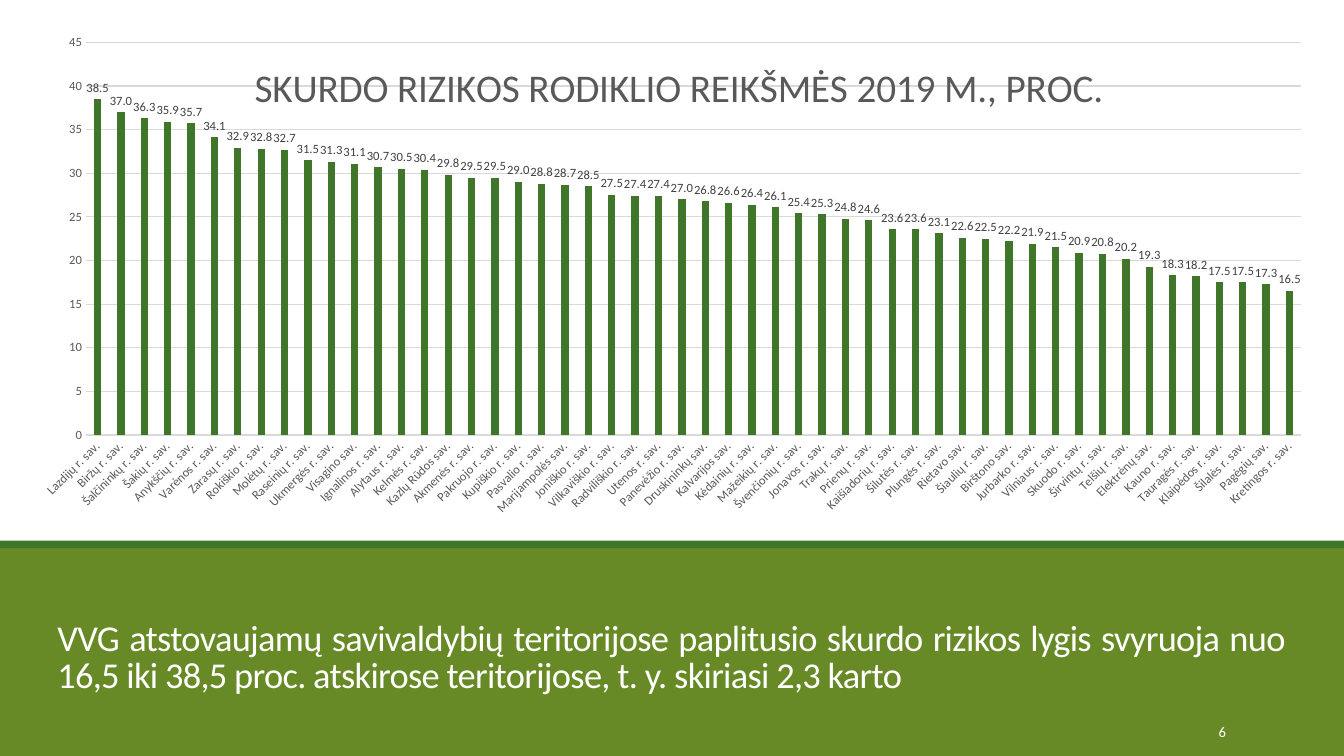
from lxml.etree import SubElement
from pptx import Presentation
from pptx.chart.data import CategoryChartData
from pptx.dml.color import RGBColor
from pptx.enum.chart import XL_CHART_TYPE, XL_LABEL_POSITION, XL_TICK_MARK
from pptx.enum.shapes import MSO_SHAPE
from pptx.enum.text import MSO_ANCHOR, MSO_AUTO_SIZE, PP_ALIGN
from pptx.oxml import parse_xml
from pptx.oxml.ns import nsdecls, qn
from pptx.util import Pt

EMU_PER_PX = 9525
FONT = "Calibri"
COLORS = {
    "band": "678A26",
    "accent": "3F762A",
    "white": "FFFFFF",
    "black": "000000",
    "axis": "595959",
    "grid": "D9D9D9",
    "label": "404040",
}

POVERTY_RISK = [
    ("Lazdijų r.", 38.5), ("Biržų r.", 37.0), ("Šalčininkų r.", 36.3), ("Šakių r.", 35.9),
    ("Anykščių r.", 35.7), ("Varėnos r.", 34.1), ("Zarasų r.", 32.9), ("Rokiškio r.", 32.8),
    ("Molėtų r.", 32.7), ("Raseinių r.", 31.5), ("Ukmergės r.", 31.3), ("Visagino", 31.1),
    ("Ignalinos r.", 30.7), ("Alytaus r.", 30.5), ("Kelmės r.", 30.4), ("Kazlų Rūdos", 29.8),
    ("Akmenės r.", 29.5), ("Pakruojo r.", 29.5), ("Kupiškio r.", 29.0), ("Pasvalio r.", 28.8),
    ("Marijampolės", 28.7), ("Joniškio r.", 28.5), ("Vilkaviškio r.", 27.5), ("Radviliškio r.", 27.4),
    ("Utenos r.", 27.4), ("Panevėžio r.", 27.0), ("Druskininkų", 26.8), ("Kalvarijos", 26.6),
    ("Kėdainių r.", 26.4), ("Mažeikių r.", 26.1), ("Švenčionių r.", 25.4), ("Jonavos r.", 25.3),
    ("Trakų r.", 24.8), ("Prienų r.", 24.6), ("Kaišiadorių r.", 23.6), ("Šilutės r.", 23.6),
    ("Plungės r.", 23.1), ("Rietavo", 22.6), ("Šiaulių r.", 22.5), ("Birštono", 22.2),
    ("Jurbarko r.", 21.9), ("Vilniaus r.", 21.5), ("Skuodo r.", 20.9), ("Širvintų r.", 20.8),
    ("Telšių r.", 20.2), ("Elektrėnų", 19.3), ("Kauno r.", 18.3), ("Tauragės r.", 18.2),
    ("Klaipėdos r.", 17.5), ("Šilalės r.", 17.5), ("Pagėgių", 17.3), ("Kretingos r.", 16.5),
]


def px(*lengths):
    return [length * EMU_PER_PX for length in lengths]


def rgb(name):
    return RGBColor.from_string(COLORS[name])


class SlideBuilder:
    def __init__(self, page):
        self.page = page

    def style(self, font, size, color):
        font.name = FONT
        font.size = Pt(size)
        font.bold = False
        font.color.rgb = rgb(color)

    def set_text(self, frame, text, size, align, anchor):
        frame.word_wrap = True
        frame.auto_size = MSO_AUTO_SIZE.NONE
        frame.vertical_anchor = anchor
        para = frame.paragraphs[0]
        para.alignment = align
        span = para.add_run()
        span.text = text
        self.style(span.font, size, "white")
        return para, span

    def bar(self, left, top, width, height, color):
        box = self.page.shapes.add_shape(MSO_SHAPE.RECTANGLE, *px(left, top, width, height))
        box.shadow.inherit = False
        box.fill.solid()
        box.fill.fore_color.rgb = rgb(color)
        box.line.fill.background()

    def title(self, left, top, width, height, text):
        box = self.page.shapes.title
        box.left, box.top, box.width, box.height = px(left, top, width, height)
        self.page.shapes._spTree.append(box._element)
        para, span = self.set_text(box.text_frame, text, 26, PP_ALIGN.JUSTIFY, MSO_ANCHOR.BOTTOM)
        para.line_spacing = 0.85
        span.font._element.set("spc", "-50")

    def number(self, left, top, width, height, text):
        box = self.page.shapes.add_textbox(*px(left, top, width, height))
        self.set_text(box.text_frame, text, 10.5, PP_ALIGN.RIGHT, MSO_ANCHOR.MIDDLE)

    def arrange(self, parent, index, **values):
        old = parent.find(qn("c:layout"))
        if old is not None:
            parent.remove(old)
        layout = parse_xml(f"<c:layout {nsdecls('c')}/>")
        manual = SubElement(layout, qn("c:manualLayout"))
        for name, value in values.items():
            SubElement(manual, qn(f"c:{name}")).set("val", str(value))
        parent.insert(index, layout)

    def axis(self, axis):
        axis.major_tick_mark = XL_TICK_MARK.NONE
        axis.minor_tick_mark = XL_TICK_MARK.NONE
        self.style(axis.tick_labels.font, 9, "axis")

    def chart(self, left, top, width, height, heading, rows):
        data = CategoryChartData(number_format="0.0")
        data.categories = [f"{name} sav." for name, value in rows]
        data.add_series("Skurdo rizika", [value for name, value in rows])
        frame = self.page.shapes.add_chart(
            XL_CHART_TYPE.COLUMN_CLUSTERED, *px(left, top, width, height), data)
        chart = frame.chart
        chart.has_legend = False
        self.style(chart.font, 10, "black")

        chart.has_title = True
        span = chart.chart_title.text_frame.paragraphs[0].add_run()
        span.text = heading
        self.style(span.font, 28, "axis")
        title = chart.chart_title._element
        self.arrange(title, 1, xMode="edge", yMode="edge", x=0.166, y=0.04)
        title.find(qn("c:overlay")).set("val", "1")
        self.arrange(chart._chartSpace.chart.plotArea, 0, layoutTarget="inner",
                     xMode="edge", yMode="edge", x=0.04, y=0.016, w=0.948, h=0.806)

        names = chart.category_axis
        self.axis(names)
        names.format.line.color.rgb = rgb("grid")
        names.format.line.width = Pt(0.75)
        names._element.find(qn("c:txPr")).find(qn("a:bodyPr")).set("rot", "-2700000")

        scale = chart.value_axis
        self.axis(scale)
        scale.minimum_scale, scale.maximum_scale, scale.major_unit = 0, 45, 5
        scale.tick_labels.number_format = "0"
        scale.tick_labels.number_format_is_linked = False
        scale.format.line.fill.background()
        scale.major_gridlines.format.line.color.rgb = rgb("grid")
        scale.major_gridlines.format.line.width = Pt(0.75)

        plot = chart.plots[0]
        plot.gap_width = 219
        plot.overlap = -27
        plot.vary_by_categories = False
        series = plot.series[0]
        series.format.fill.solid()
        series.format.fill.fore_color.rgb = rgb("accent")
        plot.has_data_labels = True
        labels = plot.data_labels
        labels.show_value = True
        labels.number_format = "0.0"
        labels.number_format_is_linked = False
        labels.position = XL_LABEL_POSITION.OUTSIDE_END
        self.style(labels.font, 9, "label")


def main():
    deck = Presentation()
    deck.slide_width, deck.slide_height = px(1280, 720)
    builder = SlideBuilder(deck.slides.add_slide(deck.slide_layouts[5]))
    builder.bar(0, 520, 1280, 200, "band")
    builder.title(
        45, 560, 1189, 108,
        "VVG atstovaujamų savivaldybių teritorijose paplitusio skurdo rizikos lygis "
        "svyruoja nuo 16,5 iki 38,5 proc. atskirose teritorijose, t. y. skiriasi 2,3 karto")
    builder.bar(0, 515, 1280, 7, "accent")
    builder.chart(33, 33, 1221, 464,
                  "SKURDO RIZIKOS RODIKLIO REIKŠMĖS 2019 M., PROC.", POVERTY_RISK)
    builder.number(1040, 678, 137, 38, "6")
    deck.save("out.pptx")


if __name__ == "__main__":
    main()
